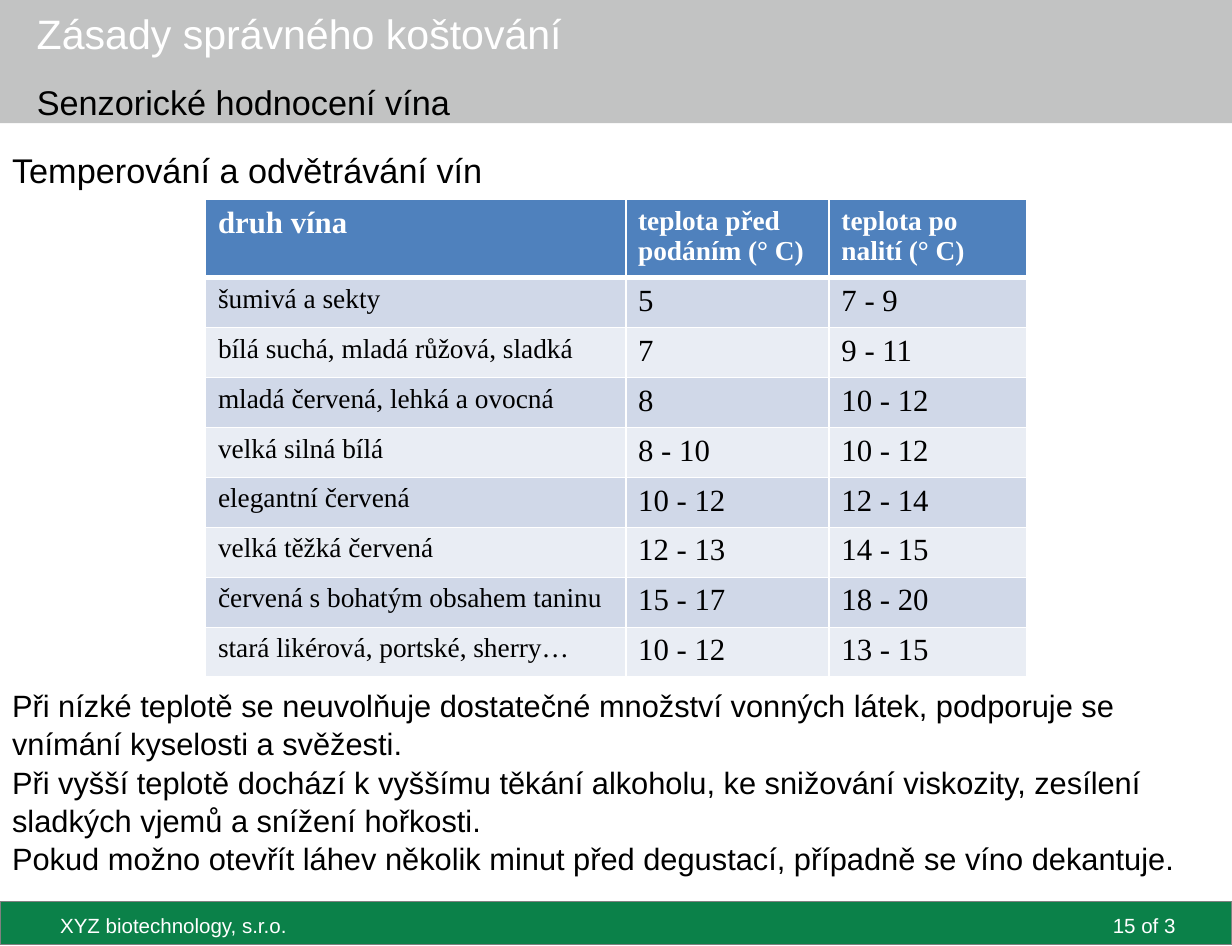
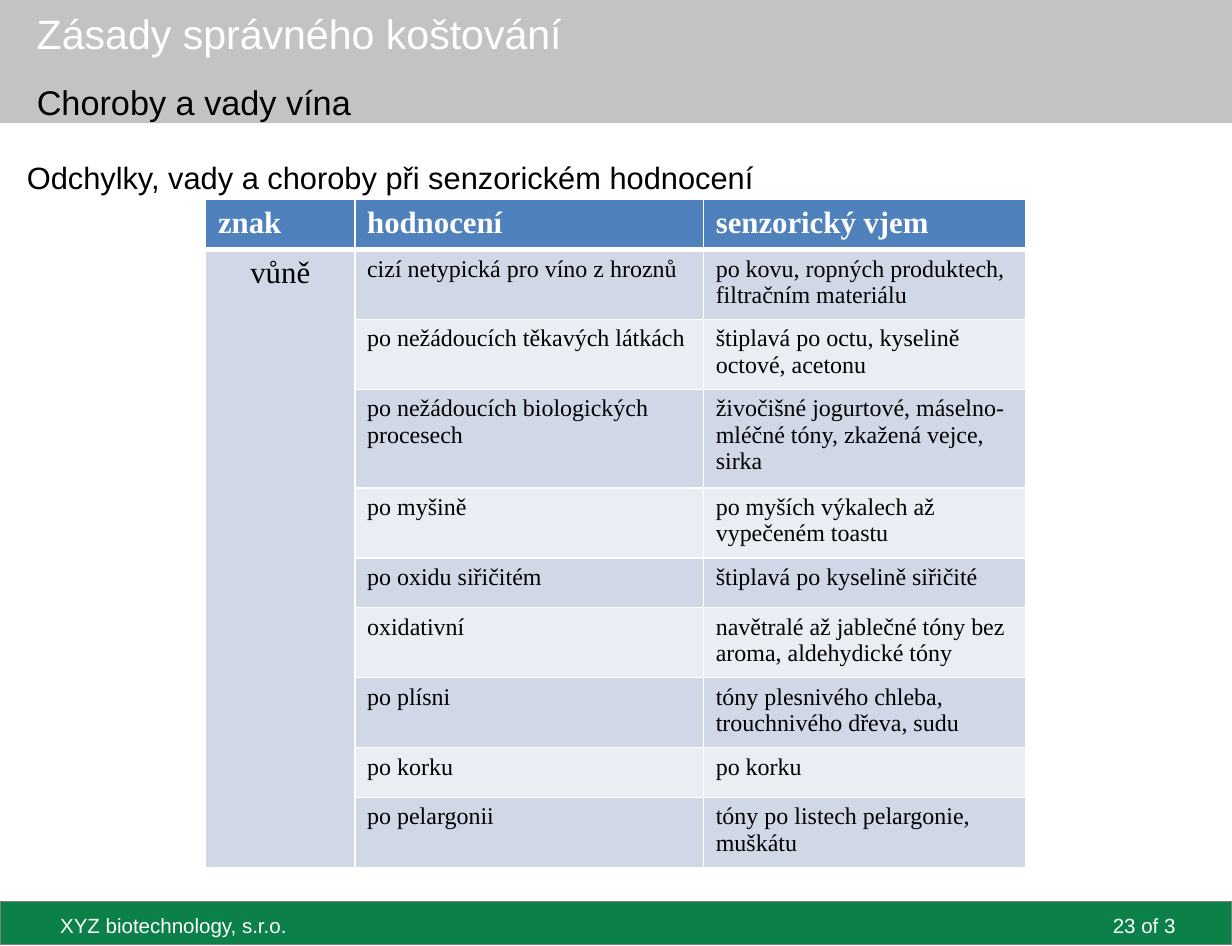
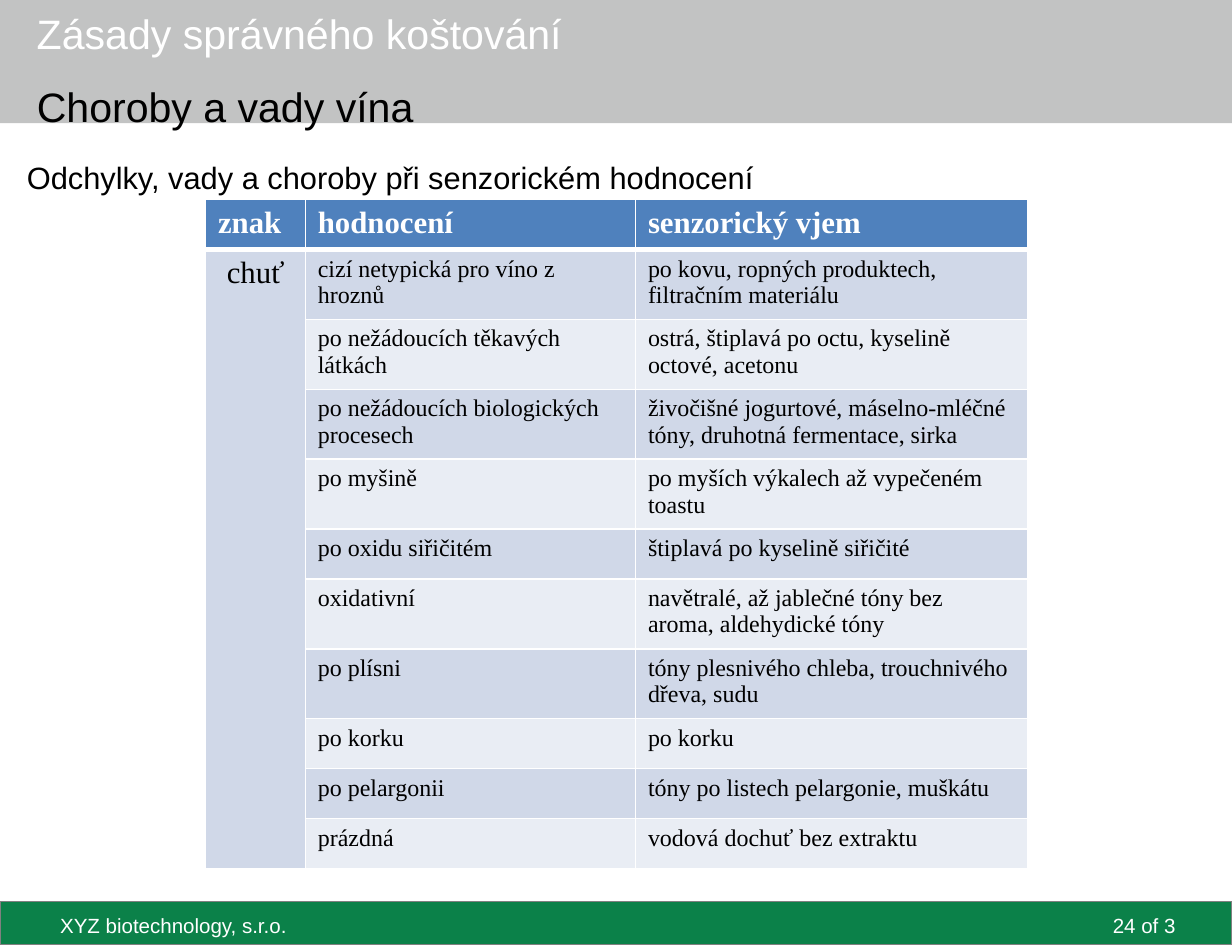
import pptx
import pptx.dml.color
import pptx.enum.shapes
import pptx.enum.text
import pptx.oxml
import pptx.oxml.ns
import pptx.util
from pptx.util import Inches

SANS, SERIF = "Arial", "Times New Roman"
BLACK, WHITE = "000000", "FFFFFF"
GREY, GREEN, OUTLINE = "C2C3C3", "0B8149", "808080"
HEADER_BLUE, BANDS = "4F81BD", ("D0D8E8", "E9EDF4")
LEFT = pptx.enum.text.PP_ALIGN.LEFT
CENTER = pptx.enum.text.PP_ALIGN.CENTER
RIGHT = pptx.enum.text.PP_ALIGN.RIGHT
ROW_HEIGHT = 3.65 / 9  # nine single-line rows fill 3.65 inches


def color(value):
    return pptx.dml.color.RGBColor.from_string(value)


def bezier(start, control_1, control_2, end, steps=32):
    """Points along a cubic curve, without its start."""
    for step in range(1, steps + 1):
        t = step / steps
        weights = ((1 - t) ** 3, 3 * t * (1 - t) ** 2, 3 * t * t * (1 - t), t ** 3)
        points = (start, control_1, control_2, end)
        yield tuple(sum(w * p[axis] for w, p in zip(weights, points)) for axis in (0, 1))


class Deck:
    def __init__(self):
        self.presentation = pptx.Presentation()
        self.presentation.slide_width = Inches(10)
        self.presentation.slide_height = Inches(7.68)
        self.slide = None

    def add_slide(self, number, topic, topic_size=20):
        self.slide = self.presentation.slides.add_slide(self.presentation.slide_layouts[6])
        self.title_band()
        self.footer_band()
        self.text(0.39, 7.36, 6.06, 0.29, ["XYZ biotechnology, s.r.o."], 12, WHITE)
        self.text(8.62, 7.36, 1.02, 0.29, [f"{number} of 3"], 12, WHITE, RIGHT)
        title = self.text(0.2, 0, 9, 0.53, ["Zásady správného koštování"], 24, WHITE)
        title.vertical_anchor = pptx.enum.text.MSO_ANCHOR.MIDDLE
        self.text(0.2, 0.61, 6.85, 0.55, [topic], topic_size)

    def title_band(self):
        curve = bezier((8.68, 1.05), (7.95, 1.05), (8.24, 0.53), (7.51, 0.53))
        builder = self.slide.shapes.build_freeform(10, 1.05, scale=Inches(1))
        builder.add_line_segments([(8.68, 1.05), *curve, (0, 0.53), (0, 0), (10, 0)])
        shape = builder.convert_to_shape()
        self.paint(shape, GREY)

    def footer_band(self):
        shape = self.slide.shapes.add_shape(
            pptx.enum.shapes.MSO_SHAPE.RECTANGLE,
            Inches(0), Inches(7.32), Inches(10), Inches(0.35))
        self.paint(shape, GREEN, OUTLINE)

    def paint(self, shape, fill, line=None):
        shape.shadow.inherit = False
        shape.fill.solid()
        shape.fill.fore_color.rgb = color(fill)
        if line:
            shape.line.color.rgb = color(line)
            shape.line.width = pptx.util.Pt(0.75)
        else:
            shape.line.fill.background()

    def style(self, paragraph, size, ink, name, bold=False, alignment=LEFT):
        paragraph.alignment = alignment
        font = paragraph.font
        font.name, font.size, font.bold = name, pptx.util.Pt(size), bold
        font.color.rgb = color(ink)

    def text(self, left, top, width, height, lines, size, ink=BLACK, alignment=LEFT):
        box = self.slide.shapes.add_textbox(
            Inches(left), Inches(top), Inches(width), Inches(height))
        frame = box.text_frame
        frame.word_wrap = True
        frame.text = "\n".join(lines)
        for paragraph in frame.paragraphs:
            self.style(paragraph, size, ink, SANS, alignment=alignment)
        return frame

    def borders(self, cell, top, bottom):
        properties = cell._tc.get_or_add_tcPr()
        for side, points in (("L", 1), ("R", 1), ("T", top), ("B", bottom)):
            properties.append(pptx.oxml.parse_xml(
                f'<a:ln{side} {pptx.oxml.ns.nsdecls("a")} w="{pptx.util.Pt(points)}">'
                f'<a:solidFill><a:srgbClr val="{WHITE}"/></a:solidFill></a:ln{side}>'))

    def table(self, widths, rows, header_sizes, body_sizes):
        table = self.slide.shapes.add_table(
            len(rows), len(widths), Inches(1.67), Inches(1.62),
            Inches(sum(widths)), Inches(ROW_HEIGHT * len(rows))).table
        for column, width in zip(table.columns, widths):
            column.width = Inches(width)
        for r, row in enumerate(rows):
            table.rows[r].height = Inches(ROW_HEIGHT)
            header = r == 0
            for c, value in enumerate(row):
                cell = table.cell(r, c)
                self.borders(cell, 3 if r == 1 else 1, 3 if header else 1)
                cell.fill.solid()
                cell.fill.fore_color.rgb = color(HEADER_BLUE if header else BANDS[(r - 1) % 2])
                cell.text = value
                self.style(cell.text_frame.paragraphs[0],
                           (header_sizes if header else body_sizes)[c],
                           WHITE if header else BLACK, SERIF, header)
        return table

    def fault_table(self, sense, widths, faults):
        """Faults of one sense, named in a cell merged down the first column."""
        self.text(0.12, 1.24, 9.76, 6.06,
                  ["Odchylky, vady a choroby při senzorickém hodnocení"], 18)
        rows = [("znak", "hodnocení", "senzorický vjem")]
        rows += [("" if i else sense, *fault) for i, fault in enumerate(faults)]
        table = self.table(widths, rows, (18, 18, 18), (18, 14, 14))
        table.cell(1, 0).merge(table.cell(len(faults), 0))
        table.cell(1, 0).text_frame.paragraphs[0].alignment = CENTER


SERVING = [
    ("druh vína", "teplota před podáním (° C)", "teplota po nalití (° C)"),
    ("šumivá a sekty", "5", "7 - 9"),
    ("bílá suchá, mladá růžová, sladká", "7", "9 - 11"),
    ("mladá červená, lehká a ovocná", "8", "10 - 12"),
    ("velká silná bílá", "8 - 10", "10 - 12"),
    ("elegantní červená", "10 - 12", "12 - 14"),
    ("velká těžká červená", "12 - 13", "14 - 15"),
    ("červená s bohatým obsahem taninu", "15 - 17", "18 - 20"),
    ("stará likérová, portské, sherry…", "10 - 12", "13 - 15"),
]
SERVING_NOTES = [
    "Temperování a odvětrávání vín",
    "Při nízké teplotě se neuvolňuje dostatečné množství vonných látek, "
    "podporuje se vnímání kyselosti a svěžesti.",
    "Při vyšší teplotě dochází k vyššímu těkání alkoholu, ke snižování viskozity, "
    "zesílení sladkých vjemů a snížení hořkosti.",
    "Pokud možno otevřít láhev několik minut před degustací, případně se víno dekantuje.",
]
SMELL_FAULTS = {
    "cizí netypická pro víno z hroznů": "po kovu, ropných produktech, filtračním materiálu",
    "po nežádoucích těkavých látkách": "štiplavá po octu, kyselině octové, acetonu",
    "po nežádoucích biologických procesech":
        "živočišné jogurtové, máselno- mléčné tóny, zkažená vejce, sirka",
    "po myšině": "po myších výkalech až vypečeném toastu",
    "po oxidu siřičitém": "štiplavá po kyselině siřičité",
    "oxidativní": "navětralé až jablečné tóny bez aroma, aldehydické tóny",
    "po plísni": "tóny plesnivého chleba, trouchnivého dřeva, sudu",
    "po korku": "po korku",
    "po pelargonii": "tóny po listech pelargonie, muškátu",
}
# Taste shares the faults of smell, apart from these
TASTE_FAULTS = SMELL_FAULTS | {
    "po nežádoucích těkavých látkách": "ostrá, štiplavá po octu, kyselině octové, acetonu",
    "po nežádoucích biologických procesech":
        "živočišné jogurtové, máselno-mléčné tóny, druhotná fermentace, sirka",
    "oxidativní": "navětralé, až jablečné tóny bez aroma, aldehydické tóny",
    "prázdná": "vodová dochuť bez extraktu",
}


def main():
    deck = Deck()

    # Serving temperatures, with the notes continuing below the table
    deck.add_slide(15, "Senzorické hodnocení vína")
    heading, *notes = deck.text(0, 1.16, 9.76, 6.06, SERVING_NOTES, 18).paragraphs
    heading.font.size = pptx.util.Pt(20)
    notes[0].space_before = Inches(4.02)
    for note in notes:
        note.line_spacing = 1.045
    deck.table((3.41, 1.65, 1.6), SERVING, (18, 16, 16), (16, 18, 18))

    # Faults of smell
    deck.add_slide(23, "Choroby a vady vína")
    deck.fault_table("vůně", (1.21, 2.83, 2.62), SMELL_FAULTS.items())

    # Faults of taste
    deck.add_slide(24, "Choroby a vady vína", topic_size=24)
    deck.fault_table("chuť", (0.81, 2.68, 3.18), TASTE_FAULTS.items())

    deck.presentation.save("out.pptx")


if __name__ == "__main__":
    main()
